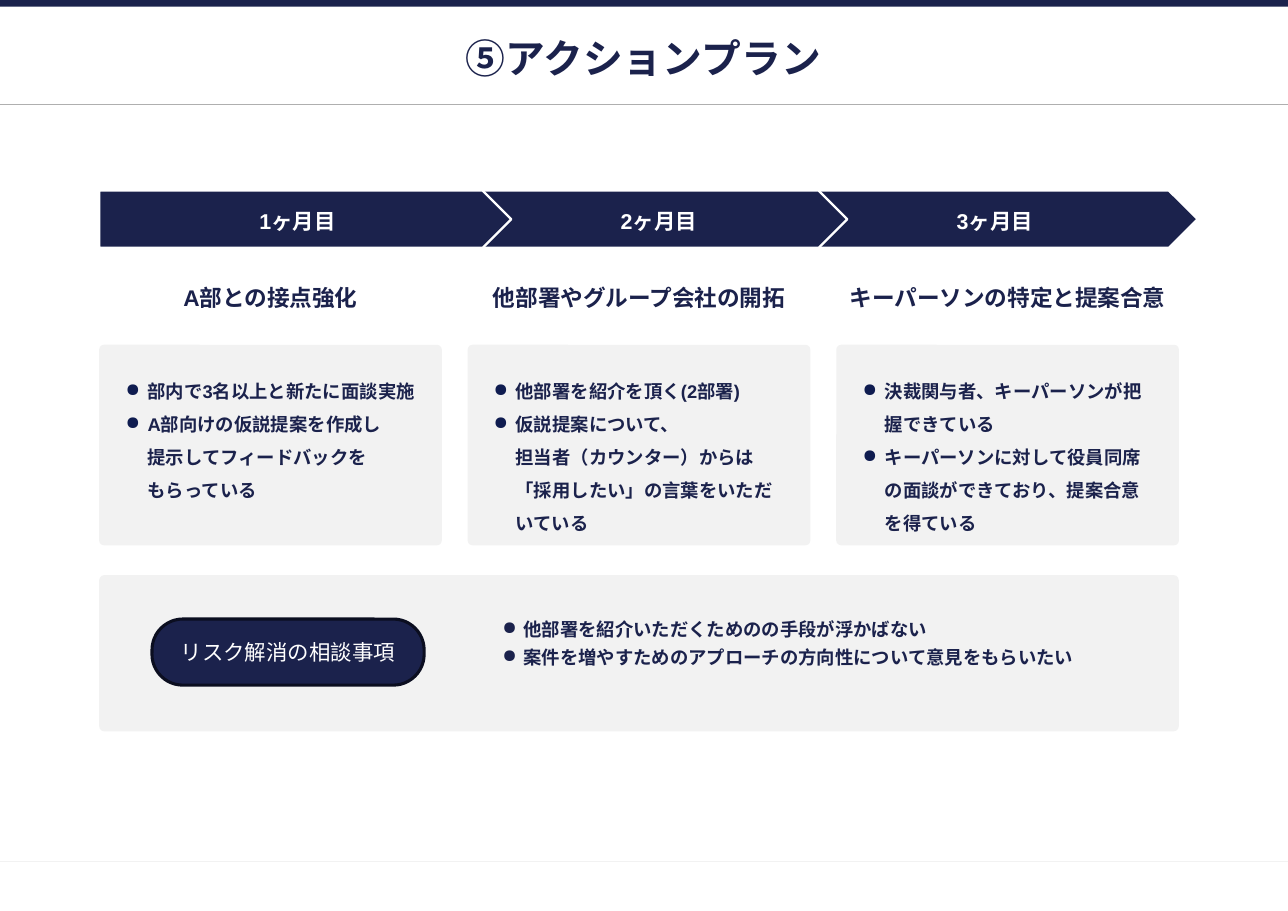
"""Build the action plan slide with three monthly steps and a risk panel."""
from copy import deepcopy

from pptx import Presentation
from pptx.dml.color import RGBColor
from pptx.enum.shapes import MSO_CONNECTOR as CONN, MSO_SHAPE as SHAPE
from pptx.enum.text import MSO_ANCHOR as ANCHOR, MSO_AUTO_SIZE as AUTO, PP_ALIGN as ALIGN
from pptx.oxml.ns import qn
from pptx.oxml.xmlchemy import OxmlElement
from pptx.util import Inches, Pt

COLORS = {
    "navy": "1B224C", "bullet": "0F1C50", "edge": "0B0E20",
    "panel": "F2F2F2", "rule": "AFAFAF", "white": "FFFFFF",
}

STEPS = [
    {"arrow": 0.9, "label": 1.48, "list": (1.1, 2.82, 1.29),
     "heading": "A部との接点強化",
     "items": ["部内で3名以上と新たに面談実施",
               "A部向けの仮説提案を作成し\n提示してフィードバックを\nもらっている"]},
    {"arrow": 3.95, "label": 4.76, "list": (4.44, 2.72, 1.59),
     "heading": "他部署やグループ会社の開拓",
     "items": ["他部署を紹介を頂く(2部署)",
               "仮説提案について、\n担当者（カウンター）からは「採用したい」の言葉をいただいている"]},
    {"arrow": 7.13, "label": 7.81, "list": (7.79, 2.72, 1.59),
     "heading": "キーパーソンの特定と提案合意",
     "items": ["決裁関与者、キーパーソンが把握できている",
               "キーパーソンに対して役員同席の面談ができており、提案合意を得ている"]},
]
RISKS = ["他部署を紹介いただくためのの手段が浮かばない",
         "案件を増やすためのアプローチの方向性について意見をもらいたい"]
CARD_LEFT, CARD_WIDTH, CARD_PITCH = 0.9, 3.11, 3.345


class SlideBuilder:
    def __init__(self, slide, font="Arial"):
        self.slide = slide
        self.font = font

    def color(self, name):
        return RGBColor.from_string(COLORS[name])

    def rule(self, y, color):
        c = self.slide.shapes.add_connector(
            CONN.STRAIGHT, 0, Inches(y), Inches(11.69), Inches(y))
        c.line.color.rgb = self.color(color)
        c.line.width = Pt(0.75)
        c._element.spPr.append(OxmlElement("a:effectLst"))

    def shape(self, kind, box, fill, adj=None, line=None, width=1):
        sp = self.slide.shapes.add_shape(kind, *map(Inches, box))
        sp.shadow.inherit = False
        sp.fill.solid()
        sp.fill.fore_color.rgb = self.color(fill)
        if adj is not None:
            sp.adjustments[0] = adj
        if line:
            sp.line.color.rgb = self.color(line)
            sp.line.width = Pt(width)
        else:
            sp.line.fill.background()
        return sp

    def style(self, p, size, color, bold):
        for r in p.runs:
            r.font.name = self.font
            r.font.size = Pt(size)
            r.font.bold = bold
            r.font.color.rgb = self.color(color)
        for br in p._p.findall(qn("a:br")):
            br.append(deepcopy(p.runs[0]._r.rPr))

    def frame(self, box, bottom=0.04):
        tf = self.slide.shapes.add_textbox(*map(Inches, box)).text_frame
        tf.word_wrap = True
        tf.margin_left = tf.margin_right = tf.margin_top = Inches(0.04)
        tf.margin_bottom = Inches(bottom)
        return tf

    def centered(self, tf, text, size, color, bold=True):
        tf.vertical_anchor = ANCHOR.MIDDLE
        p = tf.paragraphs[0]
        p.text = text
        p.alignment = ALIGN.CENTER
        self.style(p, size, color, bold)

    def bullets(self, box, items, left, hang, bullet, spacing=None, before=0):
        tf = self.frame(box)
        tf.auto_size = AUTO.SHAPE_TO_FIT_TEXT
        for i, item in enumerate(items):
            p = tf.add_paragraph() if i else tf.paragraphs[0]
            p.text = item
            pPr = p._p.get_or_add_pPr()
            pPr.set("marL", str(Inches(left)))
            pPr.set("indent", str(-Inches(hang)))
            clr = OxmlElement("a:buClr")
            rgb = OxmlElement("a:srgbClr")
            rgb.set("val", COLORS[bullet])
            clr.append(rgb)
            char = OxmlElement("a:buChar")
            char.set("char", "●")
            pPr.extend([clr, char])
            if spacing:
                p.line_spacing = spacing
            if i and before:
                p.space_before = Pt(before)
            self.style(p, 12, "navy", True)


def main():
    prs = Presentation()
    prs.slide_width, prs.slide_height = Inches(11.69), Inches(8.27)
    s = SlideBuilder(prs.slides.add_slide(prs.slide_layouts[6]))

    s.rule(7.82, "panel")
    s.shape(SHAPE.RECTANGLE, (0, 0, 11.69, 0.06), "navy")
    s.rule(0.95, "rule")
    s.centered(s.frame((0.53, 0.32, 10.62, 0.43), 0.06), "⑤アクションプラン", 26, "navy")

    for step in reversed(STEPS):
        s.shape(SHAPE.PENTAGON, (step["arrow"], 1.73, 3.74, 0.52), "navy", 0.5, "white", 1.5)

    for i, step in enumerate(STEPS):
        x = CARD_LEFT + i * CARD_PITCH
        s.centered(s.frame((step["label"], 1.82, 2.44, 0.38)), f"{i + 1}ヶ月目", 14, "white")
        s.centered(s.frame((x, 2.44, CARD_WIDTH, 0.52)), step["heading"], 14.8, "navy")
        s.shape(SHAPE.ROUNDED_RECTANGLE, (x, 3.13, CARD_WIDTH, 1.82), "panel", 0.024)
        left, width, height = step["list"]
        s.bullets((left, 3.31, width, height), step["items"], 0.2, 0.2, "bullet", spacing=1.5)

    s.shape(SHAPE.ROUNDED_RECTANGLE, (0.9, 5.22, 9.8, 1.42), "panel", 0.035)
    s.bullets((4.33, 5.57, 5.88, 0.6), RISKS, 0.38, 0.19, "navy", before=4)
    pill = s.shape(SHAPE.ROUNDED_RECTANGLE, (1.38, 5.62, 2.47, 0.6), "navy", 0.467, "edge", 2)
    s.centered(pill.text_frame, "リスク解消の相談事項", 14, "white", bold=False)

    prs.save("out.pptx")


if __name__ == "__main__":
    main()
